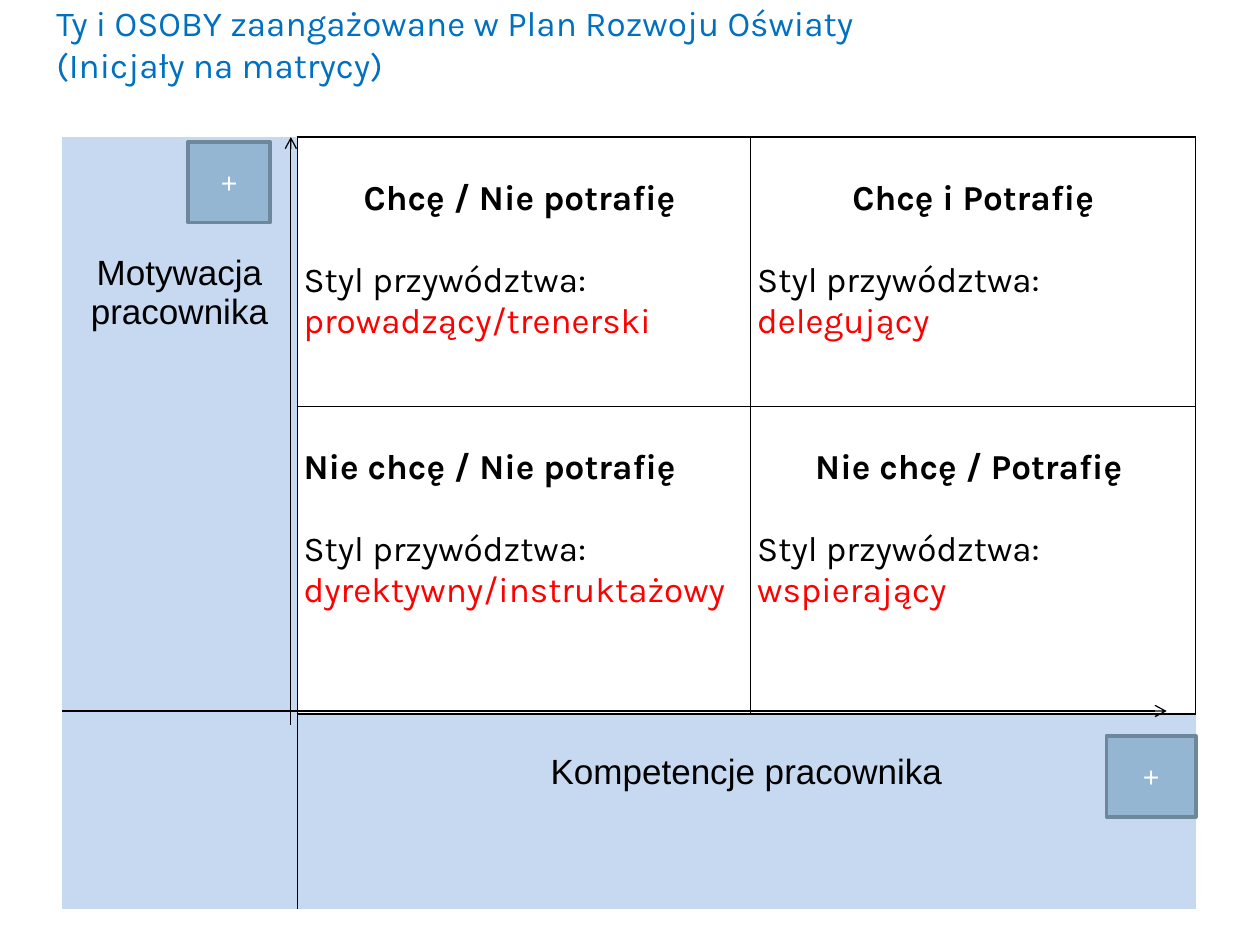
from dataclasses import dataclass

from lxml.etree import SubElement
from pptx import Presentation
from pptx.dml.color import RGBColor
from pptx.enum.shapes import MSO_CONNECTOR, MSO_SHAPE
from pptx.enum.text import MSO_ANCHOR, PP_ALIGN
from pptx.oxml.ns import qn
from pptx.util import Pt

BLACK, RED, PALE = "000000", "FF0000", "C6D9F1"
LEFT, TOP = 35.3, 78.3
COLUMNS = (134.6, 259.2, 254.2)
ROWS = (154.1, 175.7, 111.6)
LINE = 23.4


@dataclass
class Quadrant:
    row: int
    column: int
    heading: str
    style: str
    align: PP_ALIGN = PP_ALIGN.CENTER


@dataclass
class AxisLabel:
    row: int
    column: int
    text: str
    space_above: float


@dataclass
class Arrow:
    start: tuple[float, float]
    end: tuple[float, float]


@dataclass
class Plus:
    left: float
    top: float
    width: float
    height: float


QUADRANTS = (
    Quadrant(0, 1, "Chcę / Nie potrafię ", "prowadzący/trenerski"),
    Quadrant(0, 2, "Chcę i Potrafię", "delegujący"),
    Quadrant(1, 1, "Nie chcę / Nie potrafię", "dyrektywny/instruktażowy", PP_ALIGN.LEFT),
    Quadrant(1, 2, "Nie chcę / Potrafię ", "wspierający"),
)
AXIS_LABELS = (
    AxisLabel(0, 0, "Motywacja pracownika", 67),
    AxisLabel(2, 1, "Kompetencje pracownika", 22),
)
ARROWS = (
    Arrow((166.2, 414), (166.2, TOP)),
    Arrow((LEFT, 406.3), (666.7, 406.3)),
)
PLUSES = (Plus(107.5, 81, 46.8, 46.3), Plus(632.2, 420.5, 51.1, 46.3))
TITLE = ("Ty i OSOBY zaangażowane w Plan Rozwoju Oświaty", "(Inicjały na matrycy)")


def colour(value: str) -> RGBColor:
    return RGBColor.from_string(value)


def apply(target, values: dict) -> None:
    for name, value in values.items():
        setattr(target, name, value)


def write(para, text: str, tint: str = BLACK, name: str = "Karla",
          size: float = 20, bold: bool = False) -> None:
    span = para.add_run()
    span.text = text
    apply(span.font, {"name": name, "size": Pt(size), "bold": bold})
    span.font.color.rgb = colour(tint)


def set_borders(cell, widths: dict[str, float]) -> None:
    properties = cell._tc.get_or_add_tcPr()
    for side in "LRTB":
        width = widths.get(side, 0)
        edge = SubElement(properties, qn(f"a:ln{side}"), w=str(Pt(width)))
        if width:
            fill = SubElement(edge, qn("a:solidFill"))
            SubElement(fill, qn("a:srgbClr"), val=BLACK)
        else:
            SubElement(edge, qn("a:noFill"))


def border_widths(row: int, column: int) -> dict[str, float]:
    if column == 0:
        return {"R": 1}
    if row == 2:
        return {"T": 1, "L": 1} if column == 1 else {"T": 1}
    return {
        "L": 1 if column == 1 else 0.5,
        "R": 0.5 if column == 1 else 1,
        "T": 1 if row == 0 else 0.5,
        "B": 0.5 if row == 0 else 1,
    }


def draw_quadrant(table, item: Quadrant) -> None:
    cell = table.cell(item.row, item.column)
    cell.margin_top = Pt(LINE)
    para = cell.text_frame.paragraphs[0]
    apply(para, {"alignment": item.align, "space_after": Pt(LINE)})
    write(para, item.heading, bold=True)
    para = cell.text_frame.add_paragraph()
    write(para, "Styl przywództwa: ")
    write(para, item.style, RED)


def draw_axis_label(table, item: AxisLabel) -> None:
    cell = table.cell(item.row, item.column)
    cell.margin_top = Pt(item.space_above)
    para = cell.text_frame.paragraphs[0]
    para.alignment = PP_ALIGN.CENTER
    write(para, item.text, name="Arial")


def draw_matrix(page) -> None:
    table = page.shapes.add_table(
        len(ROWS), len(COLUMNS), Pt(LEFT), Pt(TOP), Pt(sum(COLUMNS)), Pt(sum(ROWS))
    ).table
    apply(table, {"first_row": False, "horz_banding": False})
    for column, width in zip(table.columns, COLUMNS):
        column.width = Pt(width)
    for row, height in zip(table.rows, ROWS):
        row.height = Pt(height)
    margins = {"margin_left": Pt(3.6), "margin_right": Pt(3.6),
               "margin_top": Pt(0), "margin_bottom": Pt(0)}
    for row in range(len(ROWS)):
        for column in range(len(COLUMNS)):
            cell = table.cell(row, column)
            apply(cell, margins)
            set_borders(cell, border_widths(row, column))
            if column == 0 or row == 2:
                cell.fill.solid()
                cell.fill.fore_color.rgb = colour(PALE)
            else:
                cell.fill.background()
    table.cell(0, 0).merge(table.cell(2, 0))
    table.cell(2, 1).merge(table.cell(2, 2))
    for item in QUADRANTS:
        draw_quadrant(table, item)
    for item in AXIS_LABELS:
        draw_axis_label(table, item)


def draw_arrow(page, item: Arrow) -> None:
    points = [Pt(value) for value in item.start + item.end]
    line = page.shapes.add_connector(MSO_CONNECTOR.STRAIGHT, *points)
    line.line.width = Pt(0.75)
    line.line.color.rgb = colour(BLACK)
    SubElement(line.line._get_or_add_ln(), qn("a:tailEnd"), type="arrow")
    SubElement(line._element.spPr, qn("a:effectLst"))


def draw_plus(page, item: Plus) -> None:
    box = page.shapes.add_shape(
        MSO_SHAPE.RECTANGLE, Pt(item.left), Pt(item.top), Pt(item.width), Pt(item.height)
    )
    box.shadow.inherit = False
    box.fill.solid()
    box.fill.fore_color.rgb = colour("94B6D2")
    box.line.color.rgb = colour("6D879B")
    box.line.width = Pt(2)
    box.text_frame.vertical_anchor = MSO_ANCHOR.MIDDLE
    para = box.text_frame.paragraphs[0]
    para.alignment = PP_ALIGN.CENTER
    write(para, "+", "FFFFFF", "Arial", 16.2)


def draw_title(page) -> None:
    frame = page.shapes.add_textbox(Pt(25.2), Pt(-4.3), Pt(686.2), Pt(85)).text_frame
    apply(frame, {"word_wrap": True, "vertical_anchor": MSO_ANCHOR.TOP,
                  "margin_top": Pt(5.4)})
    for index, text in enumerate(TITLE):
        para = frame.add_paragraph() if index else frame.paragraphs[0]
        write(para, text, "0070C0")


def main() -> None:
    deck = Presentation()
    apply(deck, {"slide_width": Pt(720), "slide_height": Pt(540)})
    page = deck.slides.add_slide(deck.slide_layouts[6])
    draw_matrix(page)
    for item in ARROWS:
        draw_arrow(page, item)
    for item in PLUSES:
        draw_plus(page, item)
    draw_title(page)
    deck.save("out.pptx")


if __name__ == "__main__":
    main()
